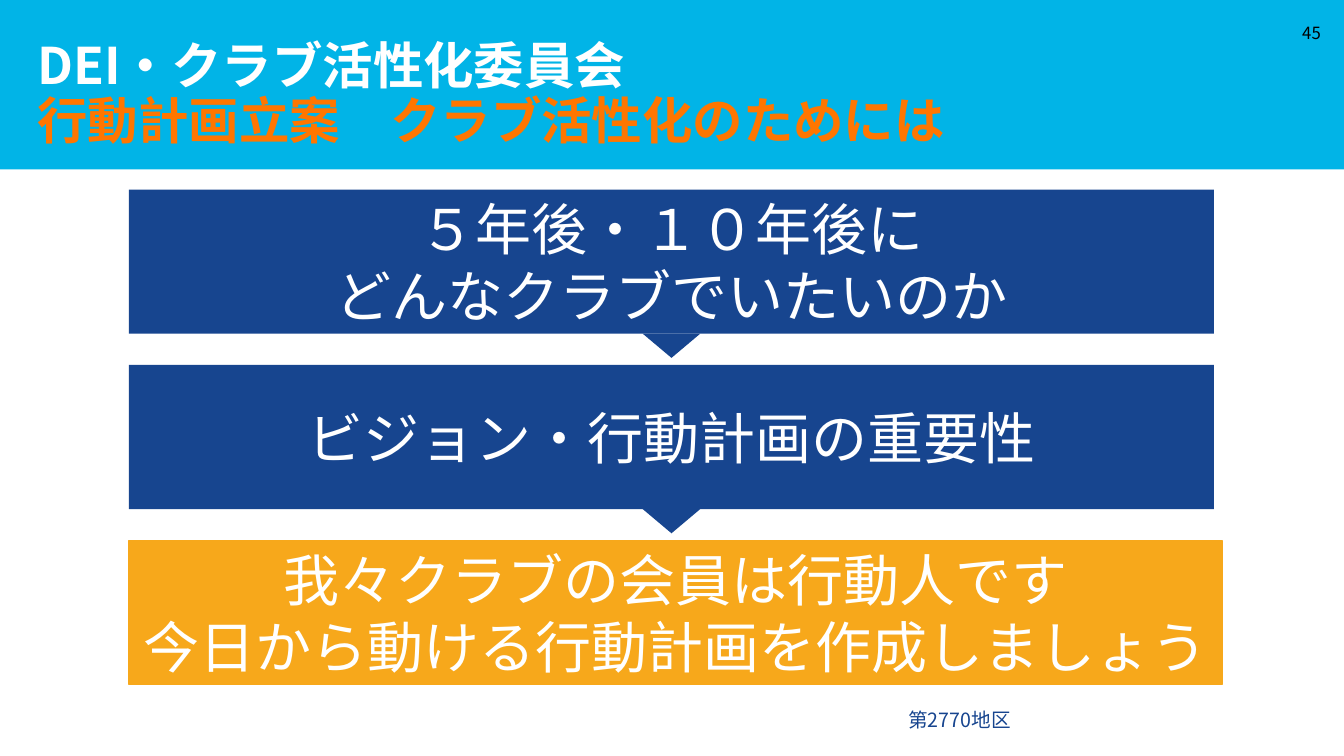
from lxml.etree import SubElement
from pptx import Presentation
from pptx.dml.color import RGBColor
from pptx.enum.shapes import MSO_SHAPE
from pptx.enum.text import MSO_ANCHOR, MSO_AUTO_SIZE, PP_ALIGN
from pptx.oxml import parse_xml
from pptx.oxml.ns import nsdecls, qn
from pptx.util import Inches, Pt

WHITE = RGBColor(0xFF, 0xFF, 0xFF)
BLACK = RGBColor(0, 0, 0)
SKY = RGBColor(0x01, 0xB4, 0xE7)
NAVY = RGBColor(0x17, 0x45, 0x8F)
GOLD = RGBColor(0xF7, 0xA8, 0x1B)
ORANGE = RGBColor(0xFF, 0x76, 0x00)
FONT = "Noto Sans CJK JP"

LEFT, TOP, WIDE, HIGH, STEP = 9.6, 25.07, 80.72, 19.07, 23.2
TIP_WIDE, TIP_HIGH = 4.28, 3.2
PANELS = [
    (["５年後・１０年後に", "どんなクラブでいたいのか"], NAVY, WIDE, None),
    (["ビジョン・行動計画の重要性"], NAVY, WIDE, None),
    (["我々クラブの会員は行動人です", "今日から動ける行動計画を作成しましょう"],
     GOLD, 81.32, GOLD),
]


def write(para, text, size=40, color=WHITE, bold=False, edge=None):
    run = para.add_run()
    run.text = text
    font = run.font
    font.size, font.bold, font.name = Pt(size), bold, FONT
    font.color.rgb = color
    props = run._r.get_or_add_rPr()
    SubElement(props, qn("a:ea")).set("typeface", FONT)
    if edge is not None:
        props.insert(0, parse_xml(
            f'<a:ln {nsdecls("a")} w="{Pt(0.75)}"><a:solidFill>'
            f'<a:srgbClr val="{edge}"/></a:solidFill></a:ln>'))


class Deck:
    """Draw styled parts on one slide, with lengths in percent of its size."""

    def __init__(self):
        self.show = Presentation()
        self.show.slide_width = Inches(13.33)
        self.show.slide_height = Inches(7.5)
        self.slide = self.show.slides.add_slide(self.show.slide_layouts[5])

    def place(self, left, top, wide, high):
        across, down = self.show.slide_width / 100, self.show.slide_height / 100
        return [round(left * across), round(top * down),
                round(wide * across), round(high * down)]

    def shape(self, kind, spot, fill, line=None):
        item = self.slide.shapes.add_shape(kind, *self.place(*spot))
        item.shadow.inherit = False
        item.fill.solid()
        item.fill.fore_color.rgb = fill
        if line is None:
            item.line.fill.background()
        else:
            item.line.color.rgb = line
            item.line.width = Pt(1)
        return item

    def panel(self, spot, lines, fill, line=None):
        frame = self.shape(MSO_SHAPE.RECTANGLE, spot, fill, line).text_frame
        frame.word_wrap = True
        frame.vertical_anchor = MSO_ANCHOR.MIDDLE
        for row, text in enumerate(lines):
            para = frame.add_paragraph() if row else frame.paragraphs[0]
            para.alignment = PP_ALIGN.CENTER
            write(para, text)

    def tip(self, spot):
        self.shape(MSO_SHAPE.ISOSCELES_TRIANGLE, spot, NAVY).rotation = 180

    def label(self, spot, text, align=PP_ALIGN.LEFT, anchor=MSO_ANCHOR.TOP, **style):
        frame = self.slide.shapes.add_textbox(*self.place(*spot)).text_frame
        frame.word_wrap = True
        frame.vertical_anchor = anchor
        frame.paragraphs[0].alignment = align
        write(frame.paragraphs[0], text, **style)

    def title(self, spot, first, second):
        item = self.slide.shapes.title
        item.left, item.top, item.width, item.height = self.place(*spot)
        item.element.getparent().append(item.element)
        frame = item.text_frame
        frame.auto_size = MSO_AUTO_SIZE.NONE
        frame.word_wrap = True
        frame.vertical_anchor = MSO_ANCHOR.BOTTOM
        frame.margin_left = frame.margin_right = frame.margin_bottom = Inches(0.1)
        frame.margin_top = 0
        para = frame.paragraphs[0]
        para.alignment = PP_ALIGN.LEFT
        para.line_spacing = 0.9
        write(para, first, size=36, bold=True)
        para.add_line_break()
        write(para, second, size=36, color=ORANGE, bold=True, edge=WHITE)


def main():
    deck = Deck()
    deck.label((66.84, 92.93, 9.23, 4.53), "第2770地区", size=14, color=NAVY)
    deck.shape(MSO_SHAPE.RECTANGLE, (0, 0, 100, 22.4), SKY)
    deck.title((2.03, 5.73, 87.77, 15.47), "DEI・クラブ活性化委員会",
               "行動計画立案　クラブ活性化のためには")
    deck.label((95.57, 1.73, 3.45, 5.33), "45", align=PP_ALIGN.RIGHT,
               anchor=MSO_ANCHOR.MIDDLE, size=12, color=BLACK)
    for row, (lines, fill, wide, line) in enumerate(PANELS):
        deck.panel((LEFT, TOP + row * STEP, wide, HIGH), lines, fill, line)
    for row in range(len(PANELS) - 1):
        deck.tip((LEFT + (WIDE - TIP_WIDE) / 2, TOP + row * STEP + HIGH,
                  TIP_WIDE, TIP_HIGH))
    deck.show.save("out.pptx")


if __name__ == "__main__":
    main()
